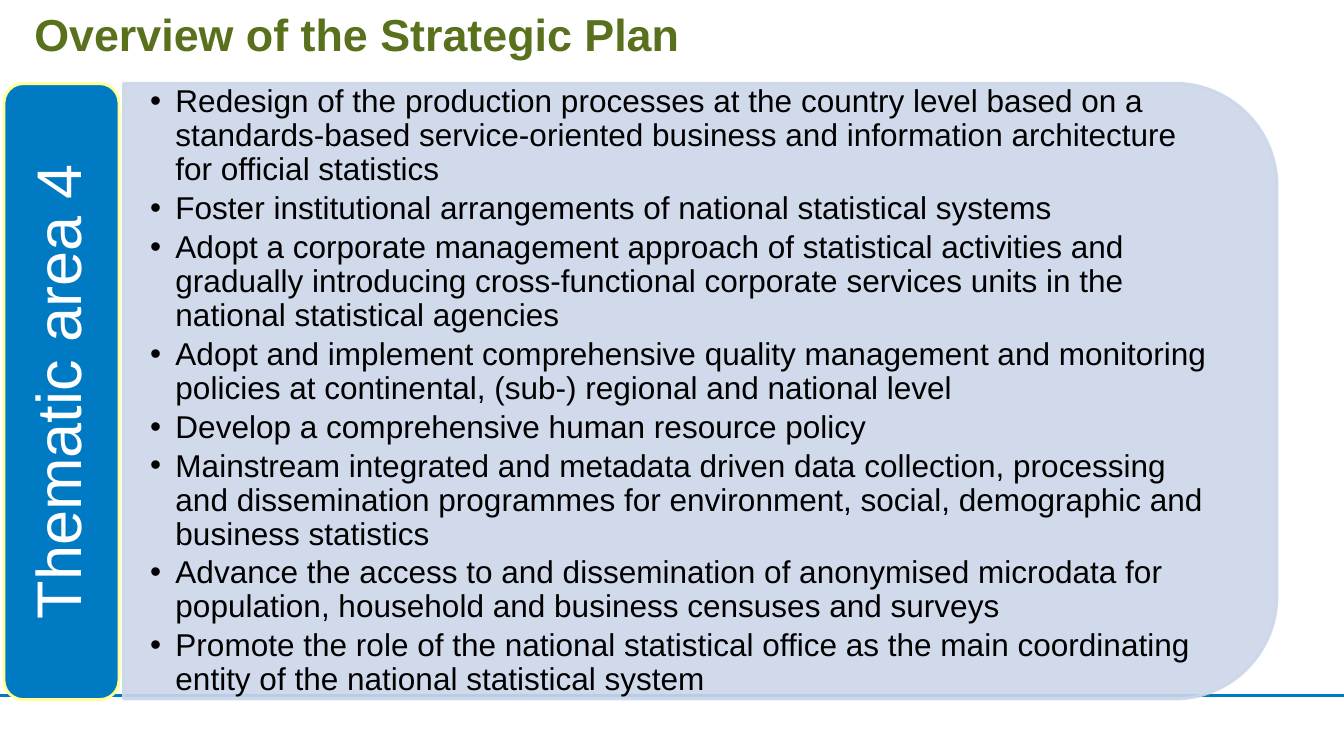
from lxml import etree
from pptx import Presentation
from pptx.dml.color import RGBColor
from pptx.enum import shapes, text
from pptx.oxml import ns
from pptx.util import Inches, Pt

GREEN = RGBColor(0x59, 0x70, 0x1D)
BLUE = RGBColor(0x00, 0x7A, 0xC2)
PALE_BLUE = RGBColor(0xCC, 0xD7, 0xE9)
YELLOW = RGBColor(0xFF, 0xFF, 0x96)
BLACK = RGBColor(0, 0, 0)
WHITE = RGBColor(0xFF, 0xFF, 0xFF)

ACTIONS = [
    "Redesign of the production processes at the country level based on a standards-based "
    "service-oriented business and information architecture for official statistics",
    "Foster institutional arrangements of national statistical systems",
    "Adopt a corporate management approach of statistical activities and gradually introducing "
    "cross-functional corporate services units in the national statistical agencies",
    "Adopt and implement comprehensive quality management and monitoring policies at "
    "continental, (sub-) regional and national level",
    "Develop a comprehensive human resource policy",
    "Mainstream integrated and metadata driven data collection, processing and dissemination "
    "programmes for environment, social, demographic and business statistics",
    "Advance the access to and dissemination of anonymised microdata for population, "
    "household and business censuses and surveys",
    "Promote the role of the national statistical office as the main coordinating entity of "
    "the national statistical system",
]


def place(shape, left, top, width, height):
    shape.left, shape.top = Inches(left), Inches(top)
    shape.width, shape.height = Inches(width), Inches(height)


def add_bullet(paragraph, indent):
    properties = paragraph._p.get_or_add_pPr()
    properties.set("marL", str(Inches(indent)))
    properties.set("indent", str(-Inches(indent)))
    etree.SubElement(properties, ns.qn("a:buChar")).set("char", "•")


def write(shape, lines, size, color, bold=False, align=text.PP_ALIGN.LEFT,
          margins=(0, 0), spacing=1.0, after=0, bullet_indent=None):
    """Fill a shape with one paragraph per line; margins are (sides, top and bottom)."""
    frame = shape.text_frame
    frame.word_wrap = True
    frame.auto_size = text.MSO_AUTO_SIZE.NONE
    frame.vertical_anchor = text.MSO_ANCHOR.MIDDLE
    frame.margin_left = frame.margin_right = Inches(margins[0])
    frame.margin_top = frame.margin_bottom = Inches(margins[1])
    frame.text = "\n".join(lines)
    for paragraph in frame.paragraphs:
        if bullet_indent:
            add_bullet(paragraph, bullet_indent)
        paragraph.alignment = align
        paragraph.line_spacing = spacing
        paragraph.space_before = Pt(0)
        paragraph.space_after = Pt(after)
        font = paragraph.font
        font.name, font.size, font.bold = "Arial", Pt(size), bold
        font.color.rgb = color


def set_opacity(color_format, percent):
    color = color_format._xFill.find(ns.qn("a:srgbClr"))
    etree.SubElement(color, ns.qn("a:alpha")).set("val", str(percent * 1000))


def add_box(slide, kind, left, top, width, height, fill, line, opacity=None):
    shape = slide.shapes.add_shape(
        kind, Inches(left), Inches(top), Inches(width), Inches(height))
    shape.shadow.inherit = False
    shape.fill.solid()
    shape.fill.fore_color.rgb = fill
    shape.line.color.rgb = line
    shape.line.width = Pt(2)
    if opacity:
        for color_format in (shape.fill.fore_color, shape.line.color):
            set_opacity(color_format, opacity)
    return shape


def add_rule(slide, top, width):
    rule = slide.shapes.add_connector(
        shapes.MSO_CONNECTOR.STRAIGHT, 0, Inches(top), Inches(width), Inches(top))
    rule.line.color.rgb = BLUE
    rule.line.width = Pt(1.5)
    etree.SubElement(rule._element.spPr, ns.qn("a:effectLst"))
    return rule


def main():
    presentation = Presentation()
    presentation.slide_width, presentation.slide_height = Inches(13.33), Inches(7.5)
    slide = presentation.slides.add_slide(presentation.slide_layouts[1])
    title, actions = slide.shapes.title, slide.placeholders[1]

    place(title, 0.34, 0.06, 12.64, 0.54)
    write(title, ["Overview of the Strategic Plan"], 32, GREEN, bold=True)

    rule = add_rule(slide, 6.9, 13.33)
    panel = add_box(slide, shapes.MSO_SHAPE.ROUND_2_SAME_RECTANGLE,
                    3.89, -1.84, 6.11, 11.44, PALE_BLUE, PALE_BLUE, opacity=90)
    panel.rotation = 90
    # The list has to lie in front of the rule and the panel.
    for backdrop in (rule, panel):
        actions.element.addprevious(backdrop.element)

    place(actions, 1.22, 1.13, 11.15, 5.51)
    write(actions, ACTIONS, 22.5, BLACK, margins=(0.27, 0.14),
          spacing=0.9, after=3.4, bullet_indent=0.25)

    area = add_box(slide, shapes.MSO_SHAPE.ROUNDED_RECTANGLE,
                   0.04, 0.83, 1.14, 6.11, BLUE, YELLOW)
    write(area, ["Thematic area 4"], 45, WHITE, align=text.PP_ALIGN.CENTER,
          margins=(0.19, 0.09), spacing=0.9)
    area.text_frame._txBody.bodyPr.set("vert", "vert270")

    presentation.save("out.pptx")


if __name__ == "__main__":
    main()
